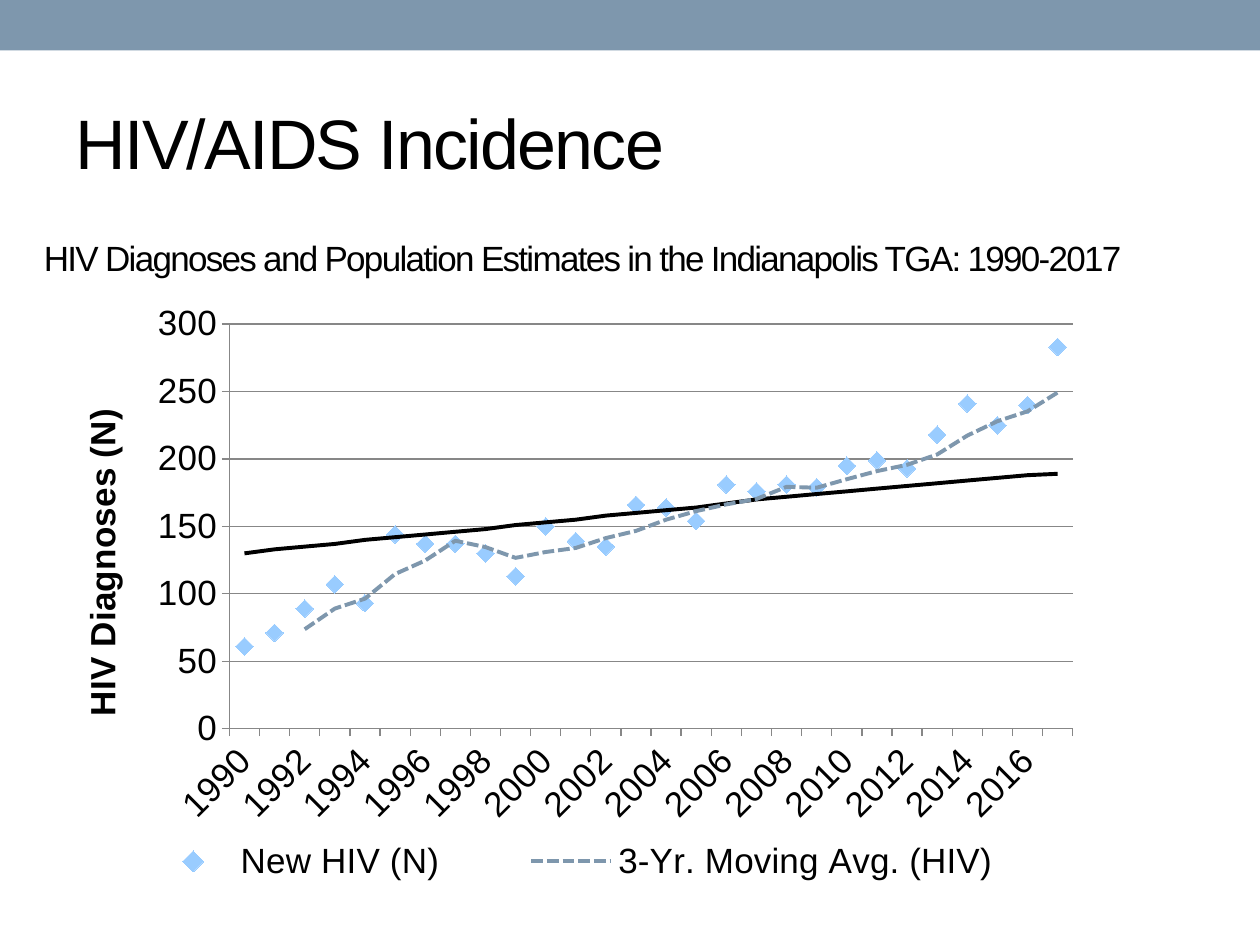
from typing import NamedTuple

from lxml.etree import SubElement
from pptx import Presentation
from pptx.chart.data import CategoryChartData
from pptx.dml.color import RGBColor
from pptx.enum.chart import XL_CHART_TYPE, XL_LEGEND_POSITION, XL_MARKER_STYLE, XL_TICK_MARK
from pptx.enum.shapes import MSO_SHAPE
from pptx.enum.text import MSO_ANCHOR, PP_ALIGN
from pptx.oxml import parse_xml
from pptx.oxml.ns import nsdecls, qn
from pptx.util import Pt

FONT = "Arial"
BLACK, SLATE, SKY, GRAY = "000000", "7E97AD", "99CCFF", "878787"
YEARS = range(1990, 2018)
CASES = [61, 71, 89, 107, 93, 144, 137, 137, 130, 113, 150, 139, 135, 166,
         164, 154, 181, 176, 181, 179, 195, 199, 193, 218, 241, 225, 240, 283]
PEOPLE = [130, 133, 135, 137, 140, 142, 144, 146, 148, 151, 153, 155, 158, 160,
          162, 164, 167, 170, 172, 174, 176, 178, 180, 182, 184, 186, 188, 189]


class Box(NamedTuple):
    """Position and size in points."""
    left: float
    top: float
    width: float
    height: float

    def points(self):
        """Return the four lengths as Pt values."""
        return [Pt(value) for value in self]


class Label(NamedTuple):
    """A heading line with its box and text size."""
    text: str
    box: Box
    size: int


TITLE = Label("HIV/AIDS Incidence", Box(36, 42, 648, 78), 40)
CAPTION = Label("HIV Diagnoses and Population Estimates in the Indianapolis TGA: 1990-2017",
                Box(18, 108, 678, 78), 20)


def color(value: str) -> RGBColor:
    """Turn a hex string into a colour."""
    return RGBColor.from_string(value)


def set_font(font, size: int, bold: bool = False) -> None:
    """Apply the common black font."""
    font.name, font.size, font.bold = FONT, Pt(size), bold
    font.color.rgb = color(BLACK)


def set_line(line, value: str, width: float) -> None:
    """Set the colour and width of a line."""
    line.color.rgb = color(value)
    line.width = Pt(width)


def write_label(shape, label: Label) -> None:
    """Place a heading and write its text."""
    shape.left, shape.top, shape.width, shape.height = label.box.points()
    frame = shape.text_frame
    frame.word_wrap = True
    frame.vertical_anchor = MSO_ANCHOR.MIDDLE
    para = frame.paragraphs[0]
    para.alignment = PP_ALIGN.LEFT
    run = para.add_run()
    run.text = label.text
    set_font(run.font, label.size)
    run.font._element.set("spc", "-100")


def layout(inner: bool = False, **parts: float):
    """Build a manual chart layout from fractions."""
    target = '<c:layoutTarget val="inner"/>' if inner else ""
    modes = '<c:xMode val="edge"/><c:yMode val="edge"/>'
    sizes = "".join(f'<c:{key} val="{value}"/>' for key, value in parts.items())
    return parse_xml(f'<c:layout {nsdecls("c")}><c:manualLayout>{target}{modes}{sizes}'
                     '</c:manualLayout></c:layout>')


def set_layout(parent, node, before: str) -> None:
    """Swap in a layout ahead of the named child."""
    for old in parent.findall(qn("c:layout")):
        parent.remove(old)
    parent.find(qn(before)).addprevious(node)


def add_trend(series) -> None:
    """Add the three-year moving average."""
    trend = parse_xml(
        f'<c:trendline {nsdecls("c", "a")}><c:name>3-Yr. Moving Avg. (HIV)</c:name>'
        f'<c:spPr><a:ln w="{Pt(2.25)}"><a:solidFill><a:srgbClr val="{SLATE}"/></a:solidFill>'
        '<a:prstDash val="sysDash"/></a:ln></c:spPr>'
        '<c:trendlineType val="movingAvg"/><c:period val="3"/>'
        '<c:dispRSqr val="0"/><c:dispEq val="0"/></c:trendline>')
    series._element.find(qn("c:cat")).addprevious(trend)


def style_series(chart) -> None:
    """Style the case markers and the population line."""
    cases, people = chart.plots[0].series
    cases.smooth = people.smooth = False
    cases.format.line.fill.background()
    cases.marker.style, cases.marker.size = XL_MARKER_STYLE.DIAMOND, 10
    cases.marker.format.fill.solid()
    cases.marker.format.fill.fore_color.rgb = color(SKY)
    cases.marker.format.line.fill.background()
    add_trend(cases)
    people.marker.style = XL_MARKER_STYLE.NONE
    set_line(people.format.line, BLACK, 2.25)


def style_axes(chart) -> None:
    """Style both axes and title the value axis."""
    years, count = chart.category_axis, chart.value_axis
    for axis in (years, count):
        axis.major_tick_mark = XL_TICK_MARK.OUTSIDE
        set_line(axis.format.line, GRAY, 0.75)
        set_font(axis.tick_labels.font, 20)
    turn = years._element.find(qn("c:txPr")).find(qn("a:bodyPr"))
    turn.set("rot", "-2700000")
    skip = parse_xml(f'<c:tickLblSkip {nsdecls("c")} val="2"/>')
    years._element.find(qn("c:noMultiLvlLbl")).addprevious(skip)
    count.minimum_scale, count.maximum_scale, count.major_unit = 0, 300, 50
    set_line(count.major_gridlines.format.line, GRAY, 0.75)
    run = count.axis_title.text_frame.paragraphs[0].add_run()
    run.text = "HIV Diagnoses (N)"
    set_font(run.font, 20, True)
    set_layout(count.axis_title._element, layout(x=0.02, y=0.18), "c:overlay")


def style_legend(chart) -> None:
    """Show the legend without the population line."""
    chart.has_legend = True
    legend = chart.legend
    legend.position = XL_LEGEND_POSITION.BOTTOM
    legend.include_in_layout = False
    set_font(legend.font, 20)
    node = legend._element
    set_layout(node, layout(x=0.02, y=0.9, w=0.96, h=0.08), "c:overlay")
    entry = parse_xml(f'<c:legendEntry {nsdecls("c")}/>')
    SubElement(entry, qn("c:idx")).set("val", "1")
    SubElement(entry, qn("c:delete")).set("val", "1")
    node.find(qn("c:legendPos")).addnext(entry)


def add_graph(slide, box: Box) -> None:
    """Add the chart of diagnoses and population."""
    data = CategoryChartData()
    data.categories = [str(year) for year in YEARS]
    data.add_series("New HIV (N)", CASES)
    data.add_series("", PEOPLE)
    chart = slide.shapes.add_chart(XL_CHART_TYPE.LINE_MARKERS, *box.points(), data).chart
    chart.has_title = False
    set_font(chart.font, 20)
    chart.plots[0].vary_by_categories = False
    style_series(chart)
    style_axes(chart)
    style_legend(chart)
    plot = chart._chartSpace.chart.plotArea
    set_layout(plot, layout(True, x=0.17, y=0.05, w=0.81, h=0.67), "c:lineChart")


def main() -> None:
    """Build and save the slide."""
    deck = Presentation()
    deck.slide_width, deck.slide_height = Pt(720), Pt(540)
    slide = deck.slides.add_slide(deck.slide_layouts[5])
    band = slide.shapes.add_shape(MSO_SHAPE.RECTANGLE, *Box(0, 0, 720, 28.8).points())
    band.shadow.inherit = False
    band.fill.solid()
    band.fill.fore_color.rgb = color(SLATE)
    band.line.fill.background()
    write_label(slide.shapes.title, TITLE)
    write_label(slide.shapes.add_textbox(*CAPTION.box.points()), CAPTION)
    add_graph(slide, Box(30, 168, 595, 345))
    deck.save("out.pptx")


if __name__ == "__main__":
    main()
